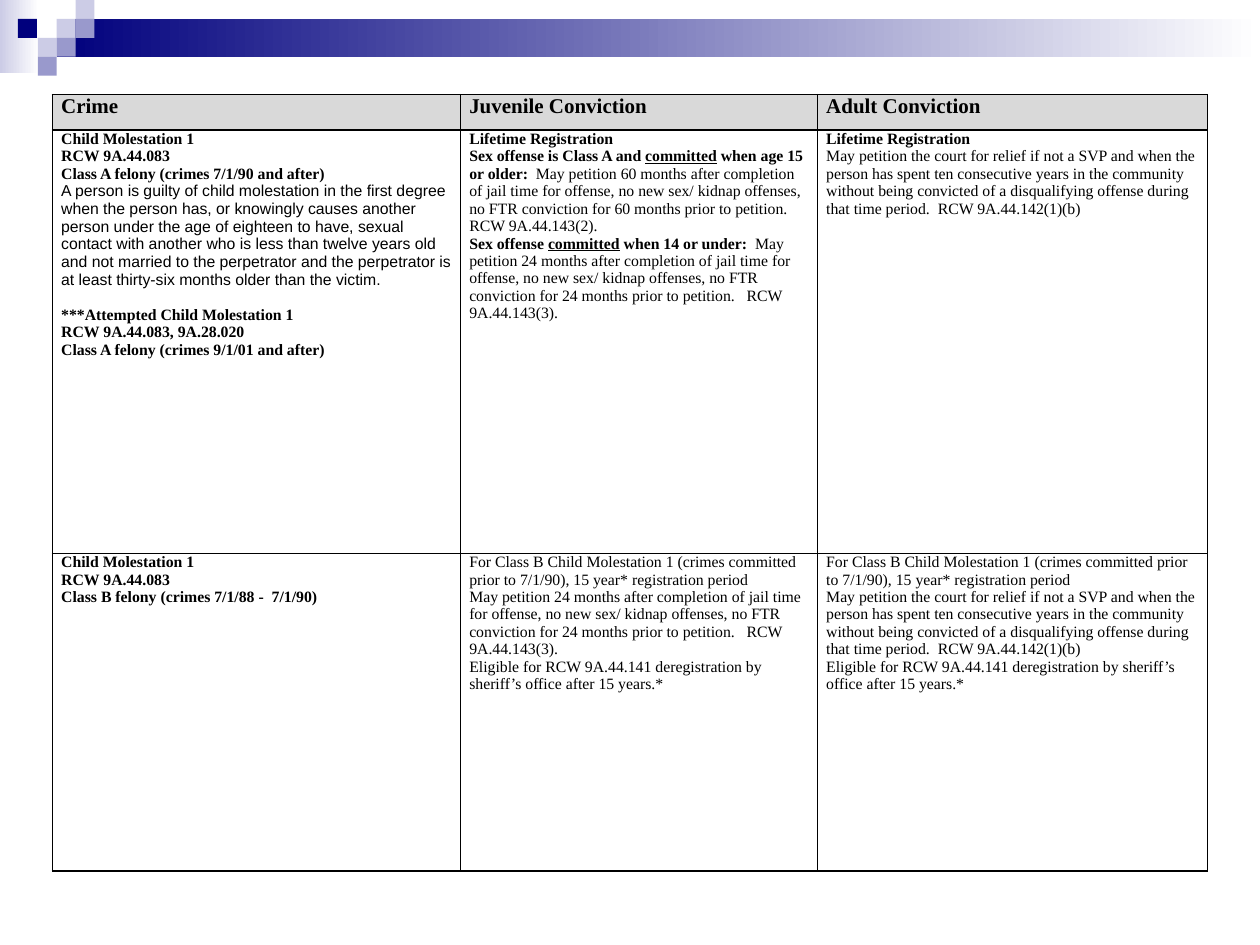
from collections import namedtuple
from functools import partial

from lxml.etree import SubElement
from pptx import Presentation
from pptx.dml.color import RGBColor
from pptx.enum.shapes import MSO_SHAPE
from pptx.oxml.ns import qn
from pptx.util import Pt

BLACK = RGBColor(0x00, 0x00, 0x00)
WHITE = RGBColor(0xFF, 0xFF, 0xFF)
NAVY = RGBColor(0x00, 0x00, 0x7D)
LAVENDER = RGBColor(0xCC, 0xCC, 0xE6)
PERIWINKLE = RGBColor(0x99, 0x99, 0xCC)
HEADER_GRAY = RGBColor(0xD9, 0xD9, 0xD9)

SERIF = "Times New Roman"
SANS = "Arial"
SQUARE = 10.8
SQUARES = [
    (3, 1, LAVENDER), (4, 0, LAVENDER), (4, 1, PERIWINKLE), (2, 2, LAVENDER),
    (0.95, 1, NAVY), (3, 2, PERIWINKLE), (2, 3, PERIWINKLE),
]

COLUMN_WIDTHS = [233.2, 204, 223]
ROW_HEIGHTS = [20.4, 241.9, 181.5]

Span = namedtuple("Span", "text bold underline font", defaults=(False, False, SERIF))
strong = partial(Span, bold=True)
underlined = partial(Span, bold=True, underline=True)

LIFETIME = [strong("Lifetime Registration")]
CRIME_NAME = [[strong("Child Molestation 1")], [strong("RCW 9A.44.083")]]
JUVENILE_24_MONTHS = (
    "May petition 24 months after completion of jail time for offense, no new sex/ kidnap "
    "offenses, no FTR conviction for 24 months prior to petition.   RCW 9A.44.143(3)."
)
ADULT_RELIEF = [Span(
    "May petition the court for relief if not a SVP and when the person has spent ten "
    "consecutive years in the community without being convicted of a disqualifying offense "
    "during that time period.  RCW 9A.44.142(1)(b)"
)]
CLASS_B_PERIOD = [Span(
    "For Class B Child Molestation 1 (crimes committed prior to 7/1/90), "
    "15 year* registration period"
)]
DEREGISTRATION = [Span(
    "Eligible for RCW 9A.44.141 deregistration by sheriff’s office after 15 years.*"
)]

HEADINGS = [[[strong(heading)]] for heading in
            ("Crime", "Juvenile Conviction", "Adult Conviction")]
CLASS_A = [
    CRIME_NAME + [
        [strong("Class A felony (crimes 7/1/90 and after)")],
        [Span(
            "A person is guilty of child molestation in the first degree when the person has, "
            "or knowingly causes another person under the age of eighteen to have, sexual "
            "contact with another who is less than twelve years old and not married to the "
            "perpetrator and the perpetrator is at least thirty-six months older than the "
            "victim.", font=SANS)],
        [strong("***Attempted Child Molestation 1")],
        [strong("RCW 9A.44.083, 9A.28.020")],
        [strong("Class A felony (crimes 9/1/01 and after)")],
    ],
    [
        LIFETIME,
        [strong("Sex offense is Class A and "), underlined("committed"),
         strong(" when age 15 or older:"),
         Span("  May petition 60 months after completion of jail time for offense, no new sex/ "
              "kidnap offenses, no FTR conviction for 60 months prior to petition.   "
              "RCW 9A.44.143(2).")],
        [strong("Sex offense "), underlined("committed"), strong(" when 14 or under:"),
         Span("  " + JUVENILE_24_MONTHS)],
    ],
    [LIFETIME, ADULT_RELIEF],
]
CLASS_B = [
    CRIME_NAME + [[strong("Class B felony (crimes 7/1/88 -  7/1/90)")]],
    [CLASS_B_PERIOD, [Span(JUVENILE_24_MONTHS)], DEREGISTRATION],
    [CLASS_B_PERIOD, ADULT_RELIEF, DEREGISTRATION],
]


def add_block(slide, left, top, width, height):
    """Add a rectangle without outline or shadow."""
    block = slide.shapes.add_shape(
        MSO_SHAPE.RECTANGLE, Pt(left), Pt(top), Pt(width), Pt(height))
    block.shadow.inherit = False
    block.line.fill.background()
    return block


def add_fading_bar(slide, left, top, width, height, color):
    """Add a bar that fades to white toward the right."""
    fill = add_block(slide, left, top, width, height).fill
    fill.gradient()
    fill.gradient_angle = 0
    for stop, position, tone in zip(fill.gradient_stops, (0, 1), (color, WHITE)):
        stop.position = position
        stop.color.rgb = tone


def add_banner(slide):
    """Add the fading bars and the mosaic of squares at the top."""
    add_fading_bar(slide, 0, 0, 22.3, 41.8, LAVENDER)
    add_fading_bar(slide, 3 * SQUARE, SQUARE, 720 - 3 * SQUARE, 2 * SQUARE, NAVY)
    for column, row, color in SQUARES:
        square = add_block(slide, column * SQUARE, row * SQUARE, SQUARE, SQUARE)
        square.fill.solid()
        square.fill.fore_color.rgb = color


def add_borders(cell):
    """Draw a thin black line on every side of a cell."""
    properties = cell._tc.get_or_add_tcPr()
    for index, side in enumerate(("a:lnL", "a:lnR", "a:lnT", "a:lnB")):
        border = properties.makeelement(qn(side), {"w": str(Pt(1))})
        solid = SubElement(border, qn("a:solidFill"))
        SubElement(solid, qn("a:srgbClr"), val=str(BLACK))
        properties.insert(index, border)


def write_cell(cell, paragraphs, size):
    """Write paragraphs into a cell run by run."""
    cell.margin_left = cell.margin_right = Pt(5)
    cell.margin_top = cell.margin_bottom = Pt(0)
    frame = cell.text_frame
    for index, spans in enumerate(paragraphs):
        paragraph = frame.add_paragraph() if index else frame.paragraphs[0]
        for span in spans:
            run = paragraph.add_run()
            run.text = span.text
            run.font.name = span.font
            run.font.size = Pt(size)
            run.font.bold = span.bold
            run.font.underline = span.underline
            run.font.color.rgb = BLACK


def add_conviction_table(slide):
    """Add the table of registration rules by crime and conviction."""
    table = slide.shapes.add_table(
        len(ROW_HEIGHTS), len(COLUMN_WIDTHS), Pt(30), Pt(54),
        Pt(sum(COLUMN_WIDTHS)), Pt(sum(ROW_HEIGHTS))).table
    table.first_row = table.horz_banding = False
    for column, width in zip(table.columns, COLUMN_WIDTHS):
        column.width = Pt(width)
    for row, height, contents in zip(table.rows, ROW_HEIGHTS, (HEADINGS, CLASS_A, CLASS_B)):
        row.height = Pt(height)
        is_header = contents is HEADINGS
        for cell, paragraphs in zip(row.cells, contents):
            write_cell(cell, paragraphs, 12 if is_header else 9)
            if is_header:
                cell.fill.solid()
                cell.fill.fore_color.rgb = HEADER_GRAY
            else:
                cell.fill.background()
            add_borders(cell)
    attempted_crime = table.cell(1, 0).text_frame.paragraphs[4]
    attempted_crime.space_before = Pt(10)


def main():
    """Build and save the slide."""
    deck = Presentation()
    deck.slide_width, deck.slide_height = Pt(720), Pt(540)
    slide = deck.slides.add_slide(deck.slide_layouts[6])
    add_banner(slide)
    add_conviction_table(slide)
    deck.save("out.pptx")


if __name__ == "__main__":
    main()
